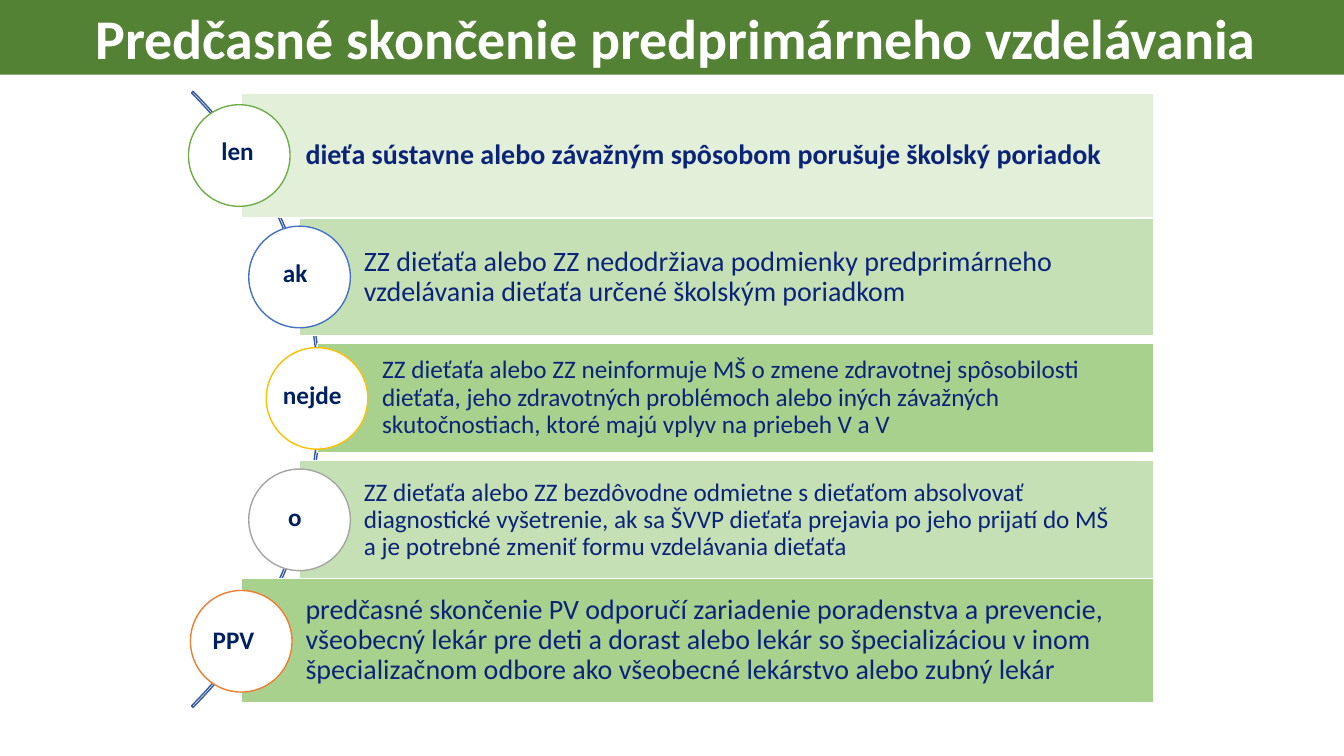
from dataclasses import dataclass

from pptx import Presentation
from pptx.dml.color import RGBColor
from pptx.enum.shapes import MSO_SHAPE
from pptx.enum.text import MSO_ANCHOR, MSO_AUTO_SIZE, PP_ALIGN
from pptx.util import Cm, Pt

RECT, OVAL, ARC = MSO_SHAPE.RECTANGLE, MSO_SHAPE.OVAL, MSO_SHAPE.BLOCK_ARC
MIDDLE = MSO_ANCHOR.MIDDLE
LEFT, CENTER = PP_ALIGN.LEFT, PP_ALIGN.CENTER
GROW = MSO_AUTO_SIZE.SHAPE_TO_FIT_TEXT

WIDTH, HEIGHT = 33.87, 19.05
BAR_RIGHT = 29.08
CIRCLE, CIRCLE_TOP, CIRCLE_PITCH = 2.56, 2.64, 3.06
LABEL_TOP, LABEL_PITCH, LABEL_HEIGHT = 3.28, 3.08, 1.02


@dataclass(frozen=True)
class Theme:
    """Colours, font and type sizes of the slide."""
    font: str = "Calibri"
    white: str = "FFFFFF"
    title_bar: str = "548235"
    arc: str = "365B9D"
    body: str = "0B2379"
    label: str = "002060"
    pale: str = "E2F0D9"
    light: str = "C5E0B4"
    medium: str = "A9D18E"
    rings: tuple = ("70AD47", "4472C4", "FFC000", "A5A5A5", "ED7D31")
    title_size: int = 40
    large: int = 20
    small: int = 18


class SlideBuilder:
    """Draws styled elements on one slide."""

    def __init__(self, slide, theme):
        self.s = slide
        self.theme = theme

    def shape(self, kind, left, top, width, height, fill=None, line=None):
        """Add a preset shape without shadow."""
        sp = self.s.shapes.add_shape(kind, Cm(left), Cm(top), Cm(width), Cm(height))
        sp.shadow.inherit = False
        if fill:
            sp.fill.solid()
            sp.fill.fore_color.rgb = RGBColor.from_string(fill)
        else:
            sp.fill.background()
        if line:
            sp.line.color.rgb = RGBColor.from_string(line)
            sp.line.width = Pt(1)
        else:
            sp.line.fill.background()
        return sp

    def text(self, tf, text, size, color, bold=False, align=LEFT, spacing=None):
        """Fill one paragraph, breaking lines at newlines."""
        p = tf.paragraphs[0]
        p.alignment = align
        p.line_spacing = spacing
        for i, part in enumerate(text.split("\n")):
            if i:
                p.add_line_break()
            r = p.add_run()
            r.text = part
            r.font.name = self.theme.font
            r.font.size = Pt(size)
            r.font.bold = bold
            r.font.color.rgb = RGBColor.from_string(color)

    def frame(self, sp, left, other):
        """Prepare a wrapping, vertically centred text frame."""
        tf = sp.text_frame
        tf.word_wrap = True
        tf.vertical_anchor = MIDDLE
        tf.margin_left = Cm(left)
        tf.margin_top = tf.margin_right = tf.margin_bottom = Cm(other)
        return tf

    def title(self, text):
        """Add the full-width title bar."""
        t = self.theme
        sp = self.shape(RECT, 0, 0, WIDTH, 1.88, t.title_bar)
        self.text(self.frame(sp, 0.2, 0), text, t.title_size, t.white, True, CENTER)

    def arc(self, left, top, size):
        """Add the thin arc behind the circles."""
        sp = self.shape(ARC, left, top, size, size, line=self.theme.arc)
        for i, value in enumerate((189, 27, 0.0025)):
            sp.adjustments[i] = value

    def bar(self, left, top, height, fill, text, size, bold):
        """Add a bar that ends at the common right edge."""
        t = self.theme
        sp = self.shape(RECT, left, top, BAR_RIGHT - left, height, fill, t.white)
        self.text(self.frame(sp, 1.63, 0.14), text, size, t.body, bold, spacing=0.9)

    def circle(self, left, top, ring):
        """Add a white circle with a coloured outline."""
        self.shape(OVAL, left, top, CIRCLE, CIRCLE, self.theme.white, ring)

    def label(self, left, top, width, text):
        """Add a bold label over a circle."""
        t = self.theme
        sp = self.s.shapes.add_textbox(Cm(left), Cm(top), Cm(width), Cm(LABEL_HEIGHT))
        tf = sp.text_frame
        tf.word_wrap = False
        tf.auto_size = GROW
        self.text(tf, text, t.small, t.label, True)


def main():
    """Build and save the slide."""
    t = Theme()
    prs = Presentation()
    prs.slide_width, prs.slide_height = Cm(WIDTH), Cm(HEIGHT)
    b = SlideBuilder(prs.slides.add_slide(prs.slide_layouts[6]), t)
    bars = [
        (6.07, 2.36, 3.12, t.pale,
         "dieťa sústavne alebo závažným spôsobom porušuje školský poriadok",
         t.large, True),
        (7.54, 5.51, 2.95, t.light,
         "ZZ dieťaťa alebo ZZ nedodržiava podmienky predprimárneho "
         "vzdelávania dieťaťa určené školským poriadkom", t.large, False),
        (8.0, 8.66, 2.74, t.medium,
         "ZZ dieťaťa alebo ZZ neinformuje MŠ o zmene zdravotnej spôsobilosti "
         "dieťaťa, jeho zdravotných problémoch alebo iných závažných "
         "skutočnostiach, ktoré majú vplyv na priebeh V a V", t.small, False),
        (7.54, 11.61, 3.0, t.light,
         "ZZ dieťaťa alebo ZZ bezdôvodne odmietne s dieťaťom absolvovať "
         "diagnostické vyšetrenie, ak sa ŠVVP dieťaťa prejavia po jeho prijatí do MŠ\n"
         "a je potrebné zmeniť formu vzdelávania dieťaťa", t.small, False),
        (6.07, 14.58, 3.12, t.medium,
         "predčasné skončenie PV odporučí zariadenie poradenstva a prevencie, "
         "všeobecný lekár pre deti a dorast alebo lekár so špecializáciou v inom "
         "špecializačnom odbore ako všeobecné lekárstvo alebo zubný lekár",
         t.large, False),
    ]
    circle_lefts = (4.75, 6.27, 6.71, 6.27, 4.8)
    labels = [(5.33, 1.32, "len"), (6.88, 1.14, "ak"), (6.88, 2.01, "nejde"),
              (7.01, 0.86, "o"), (5.11, 1.57, "PPV")]

    b.arc(-13.87, -0.91, 21.95)
    for i, (bar, left, ring) in enumerate(zip(bars, circle_lefts, t.rings)):
        b.bar(*bar)
        b.circle(left, CIRCLE_TOP + i * CIRCLE_PITCH, ring)
    for i, (left, width, text) in enumerate(labels):
        b.label(left, LABEL_TOP + i * LABEL_PITCH, width, text)
    b.title("Predčasné skončenie predprimárneho vzdelávania")
    prs.save("out.pptx")


if __name__ == "__main__":
    main()
